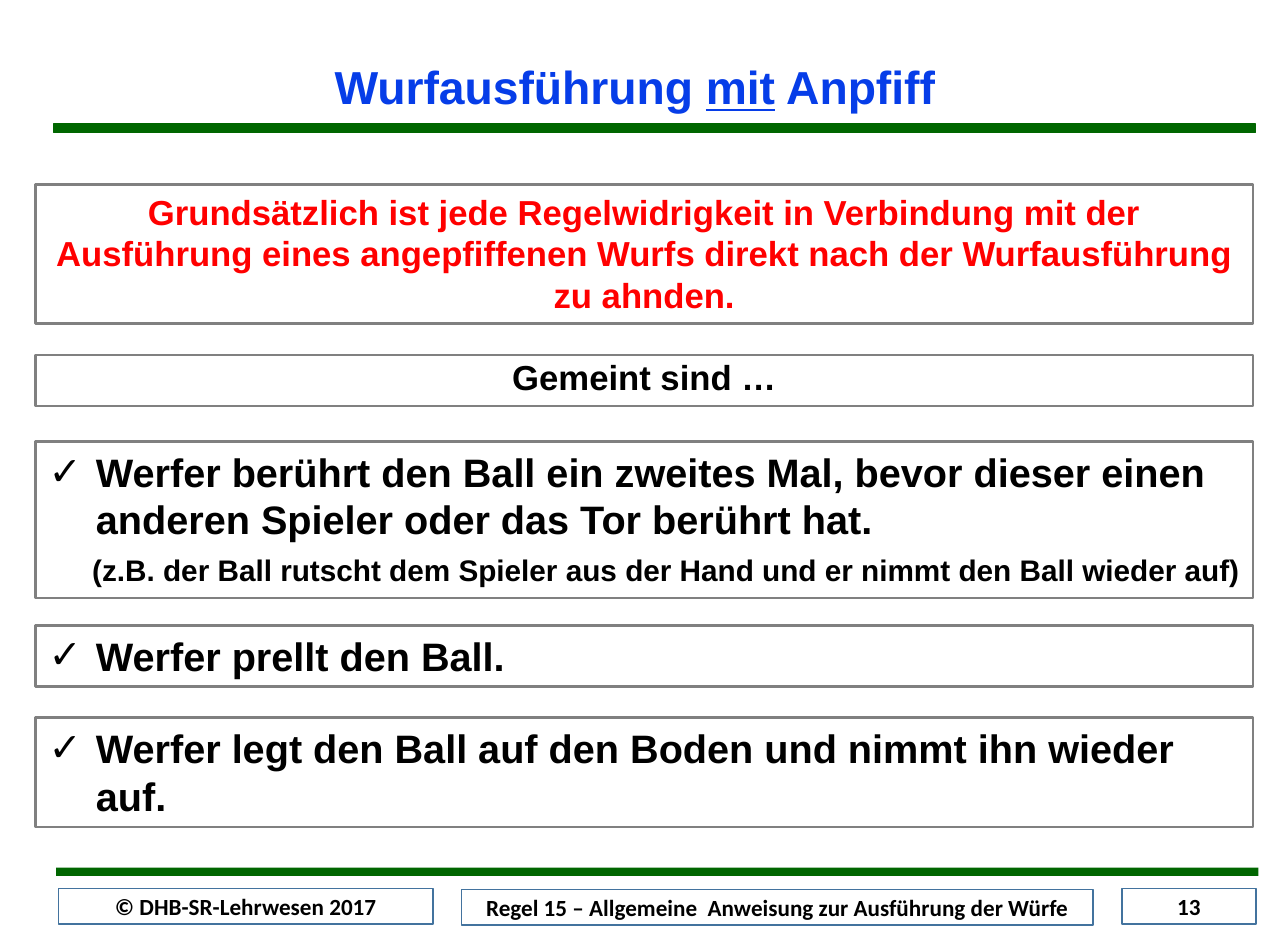
from dataclasses import dataclass

from lxml.etree import SubElement
from pptx import Presentation
from pptx.dml.color import RGBColor
from pptx.enum.shapes import MSO_SHAPE
from pptx.enum.text import MSO_ANCHOR, MSO_AUTO_SIZE, PP_ALIGN
from pptx.oxml.ns import qn
from pptx.util import Cm, Pt

GREEN, BLUE, RED, BLACK = "006600", "063DE8", "FF0000", "000000"
WHITE, GRAY, STEEL = "FFFFFF", "808080", "43739E"
RULE_LEFT, RULE_WIDTH, BAR_HEIGHT = 0.76, 26.0, 0.18
CHECK_INDENT = 1.01


@dataclass
class Line:
    text: str
    size: float = 24
    color: str = BLACK
    centered: bool = False
    check: bool = False
    indent: float = 0
    before: float = 0
    spacing: float = 1.0


@dataclass
class RuleBox:
    top: float
    height: float
    lines: list[Line]
    margin_right: float = 0.28


@dataclass
class FooterBox:
    left: float
    top: float
    width: float
    text: str


RULE_BOXES = [
    RuleBox(3.94, 2.97, [Line(
        "Grundsätzlich ist jede Regelwidrigkeit in Verbindung mit der Ausführung eines "
        "angepfiffenen Wurfs direkt nach der Wurfausführung zu ahnden.",
        size=21, color=RED, centered=True)]),
    RuleBox(7.58, 1.09, [Line("Gemeint sind …", size=21, centered=True, spacing=0.9)]),
    RuleBox(9.43, 3.35, [
        Line("Werfer berührt den Ball ein zweites Mal, bevor dieser einen anderen "
             "Spieler oder das Tor berührt hat.", check=True),
        Line("(z.B. der Ball rutscht dem Spieler aus der Hand und er nimmt den Ball "
             "wieder auf)", size=18, indent=0.93, before=5.5)], margin_right=0.1),
    RuleBox(13.36, 1.3, [Line("Werfer prellt den Ball.", check=True)]),
    RuleBox(15.33, 2.34, [
        Line("Werfer legt den Ball auf den Boden und nimmt ihn wieder auf.", check=True)]),
]

FOOTER_BOXES = [
    FooterBox(1.25, 18.98, 8.0, "© DHB-SR-Lehrwesen 2017"),
    FooterBox(9.86, 19.0, 13.49, "Regel 15 – Allgemeine  Anweisung zur Ausführung der Würfe"),
    FooterBox(23.96, 18.98, 2.87, "13"),
]


def rgb(value: str) -> RGBColor:
    return RGBColor.from_string(value)


def add_span(para, text: str, *, size: float, color: str = BLACK,
             font: str = "Arial", underline: bool = False) -> None:
    span = para.add_run()
    span.text = text
    span.font.name = font
    span.font.size = Pt(size)
    span.font.bold = True
    span.font.underline = underline
    span.font.color.rgb = rgb(color)


def add_box(page, left: float, top: float, width: float, height: float, *,
            fill: str | None = None, line: str | None = None, weight: float = 1):
    box = page.shapes.add_shape(MSO_SHAPE.RECTANGLE, Cm(left), Cm(top), Cm(width), Cm(height))
    box.shadow.inherit = False
    if fill:
        box.fill.solid()
        box.fill.fore_color.rgb = rgb(fill)
    else:
        box.fill.background()
    if line:
        box.line.color.rgb = rgb(line)
        box.line.width = Pt(weight)
    else:
        box.line.fill.background()
    return box


def set_indent(para, line: Line) -> None:
    properties = para._p.get_or_add_pPr()
    if line.check:
        properties.set("marL", str(Cm(CHECK_INDENT)))
        properties.set("indent", str(-Cm(CHECK_INDENT)))
        SubElement(properties, qn("a:buFont")).set("typeface", "Arial")
        SubElement(properties, qn("a:buChar")).set("char", "✓")
    elif line.indent:
        properties.set("marL", str(Cm(line.indent)))


def add_rule_box(page, rule: RuleBox) -> None:
    box = add_box(page, RULE_LEFT, rule.top, RULE_WIDTH, rule.height, line=GRAY, weight=1.5)
    frame = box.text_frame
    frame.word_wrap = True
    frame.vertical_anchor = MSO_ANCHOR.TOP
    frame.margin_left, frame.margin_right = Cm(0.28), Cm(rule.margin_right)
    frame.margin_top = frame.margin_bottom = Cm(0.13)
    for index, line in enumerate(rule.lines):
        para = frame.add_paragraph() if index else frame.paragraphs[0]
        set_indent(para, line)
        para.alignment = PP_ALIGN.CENTER if line.centered else PP_ALIGN.LEFT
        para.line_spacing = line.spacing
        if index:
            para.space_before = Pt(line.before)
        add_span(para, line.text, size=line.size, color=line.color)


def add_footer_box(page, footer: FooterBox) -> None:
    box = add_box(page, footer.left, footer.top, footer.width, 0.76, fill=WHITE, line=STEEL)
    frame = box.text_frame
    frame.word_wrap = True
    frame.vertical_anchor = MSO_ANCHOR.MIDDLE
    para = frame.paragraphs[0]
    para.alignment = PP_ALIGN.CENTER
    add_span(para, footer.text, size=14, font="Calibri")


def format_title(page) -> None:
    title = page.shapes.title
    title.left, title.top, title.width, title.height = Cm(6.36), Cm(1.26), Cm(14.4), Cm(1.35)
    frame = title.text_frame
    frame.word_wrap = True
    frame.auto_size = MSO_AUTO_SIZE.NONE
    frame.vertical_anchor = MSO_ANCHOR.TOP
    para = frame.paragraphs[0]
    para.alignment = PP_ALIGN.CENTER
    para.line_spacing = 0.9
    for text, underline in (("Wurfausführung ", False), ("mit", True), (" Anpfiff", False)):
        add_span(para, text, size=28, color=BLUE, underline=underline)


def main() -> None:
    deck = Presentation()
    deck.slide_width, deck.slide_height = Cm(27.51), Cm(20.12)
    page = deck.slides.add_slide(deck.slide_layouts[5])

    # Title and green bars
    format_title(page)
    add_box(page, 1.14, 2.65, 25.68, BAR_HEIGHT, fill=GREEN, line=GREEN, weight=0.75)
    add_box(page, 1.2, 18.53, 25.68, BAR_HEIGHT, fill=GREEN)

    # Rule statements
    for rule in RULE_BOXES:
        add_rule_box(page, rule)

    # Footer
    for footer in FOOTER_BOXES:
        add_footer_box(page, footer)

    deck.save("out.pptx")


if __name__ == "__main__":
    main()
